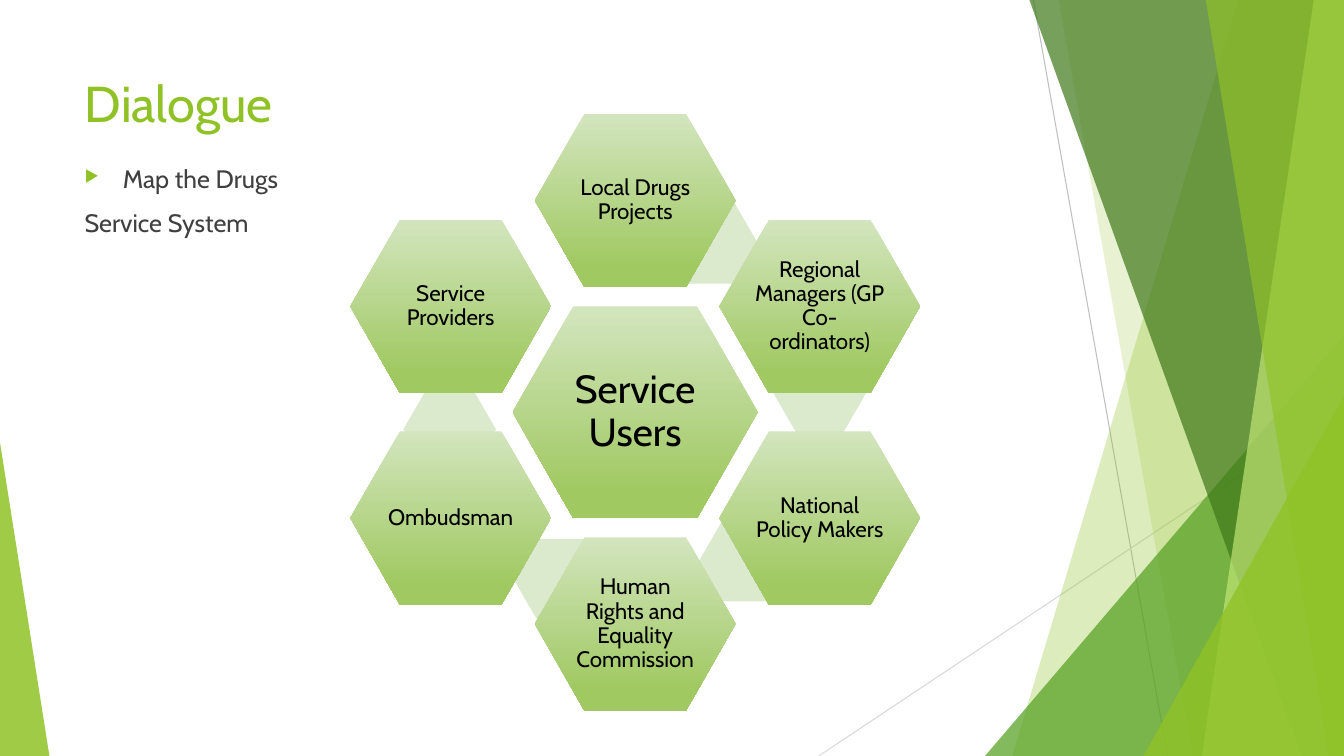
from dataclasses import dataclass

from lxml.etree import SubElement
from pptx import Presentation
from pptx.dml.color import RGBColor
from pptx.enum.shapes import MSO_CONNECTOR, MSO_SHAPE
from pptx.enum.text import MSO_ANCHOR, PP_ALIGN
from pptx.oxml.ns import qn
from pptx.util import Inches, Pt

TITLE = "Dialogue"
BODY = ["Map the Drugs", "Service System"]
HUB = "Service Users"
# Clockwise from the top
SERVICES = [
    "Local Drugs Projects",
    "Regional Managers (GP Co-ordinators)",
    "National Policy Makers",
    "Human Rights and Equality Commission",
    "Ombudsman",
    "Service Providers",
]
# Centre of the pale link behind each service; the last has none
LINK_CENTRES = [(7.06, 2.42), (8.13, 3.9), (7.39, 5.57), (5.55, 5.74), (4.46, 4.26)]

# Start, end, colour
RAYS = [
    ((10.25, 0), (11.58, 7.5), "BFBFBF"),
    ((13.33, 4.03), (8.12, 7.5), "D9D9D9"),
]
# Top left x, bottom left x, colour, opacity in percent; all reach the right edge
BANDS_BACK = [(12.28, 10.04, "90C226", 30), (10.5, 11.83, "90C226", 20)]
BANDS_FRONT = [
    (10.21, 12.91, "3F7819", 70),
    (13.03, 11.92, "C0E474", 70),
    (11.96, 13.18, "90C226", 65),
]
# Left, top, width, peak (0 left, 1 right), colour, opacity; all stand on the bottom
TRIANGLE_MIDDLE = (9.77, 3.33, 3.56, 1, "54A021", 72)
TRIANGLES_FRONT = [
    (11.34, 3.93, 1.99, 1, "90C226", 80),
    (0, 4.39, 0.49, 0, "90C226", 85),
]

WIDTH, HEIGHT = 13.33, 7.5
CENTRE_X, CENTRE_Y = 6.3, 4.09
HUB_SIZE = (2.43, 2.1)
SERVICE_SIZE = (1.99, 1.72)
LINK_SIZE = (0.92, 0.79)
STEP_X, STEP_Y = 1.83, 1.05
# Ring places in steps from the hub
RING = [(0, -2), (1, -1), (1, 1), (0, 2), (-1, 1), (-1, -1)]


@dataclass(frozen=True)
class Theme:
    font: str = "Cabin"
    accent: str = "90C226"
    body: str = "404040"
    label: str = "000000"
    hexagon_top: str = "D3E5BE"
    hexagon_bottom: str = "A0C962"
    link: str = "DBE9CD"
    title_size: int = 36
    body_size: int = 18
    hub_size: int = 28
    service_size: int = 16


THEME = Theme()


def add_span(para, text, size, colour):
    span = para.add_run()
    span.text = text
    span.font.name = THEME.font
    span.font.size = Pt(size)
    span.font.color.rgb = RGBColor.from_string(colour)


def paint(shape, colour, opacity=100):
    shape.shadow.inherit = False
    shape.line.fill.background()
    shape.fill.solid()
    shape.fill.fore_color.rgb = RGBColor.from_string(colour)
    if opacity < 100:
        tint = shape.fill._xPr.find(qn("a:solidFill"))[0]
        SubElement(tint, qn("a:alpha"), val=str(opacity * 1000))


def add_ray(page, start, end, colour):
    ray = page.shapes.add_connector(
        MSO_CONNECTOR.STRAIGHT, *[Inches(value) for value in start + end])
    ray.line.color.rgb = RGBColor.from_string(colour)
    ray.line.width = Pt(0.75)
    SubElement(ray._element.spPr, qn("a:effectLst"))


def add_band(page, top_x, bottom_x, colour, opacity):
    outline = page.shapes.build_freeform(Inches(top_x), 0)
    corners = [(WIDTH, 0), (WIDTH, HEIGHT), (bottom_x, HEIGHT)]
    outline.add_line_segments([(Inches(x), Inches(y)) for x, y in corners])
    paint(outline.convert_to_shape(), colour, opacity)


def add_triangle(page, left, top, width, peak, colour, opacity):
    triangle = page.shapes.add_shape(
        MSO_SHAPE.ISOSCELES_TRIANGLE, Inches(left), Inches(top),
        Inches(width), Inches(HEIGHT - top))
    triangle.adjustments[0] = peak
    paint(triangle, colour, opacity)


def add_hexagon(page, centre, size, slant):
    (x, y), (width, height) = centre, size
    hexagon = page.shapes.add_shape(
        MSO_SHAPE.HEXAGON, Inches(x - width / 2), Inches(y - height / 2),
        Inches(width), Inches(height))
    hexagon.adjustments[0] = slant
    paint(hexagon, THEME.link)
    return hexagon


def add_node(page, text, centre, size, text_size):
    """Add a shaded hexagon with a centred label."""
    node = add_hexagon(page, centre, size, 0.286)
    node.fill.gradient()
    node.fill.gradient_angle = 270
    first, last = node.fill.gradient_stops
    first.color.rgb = RGBColor.from_string(THEME.hexagon_top)
    first.position = 0
    last.color.rgb = RGBColor.from_string(THEME.hexagon_bottom)
    last.position = 0.88
    frame = node.text_frame
    frame.word_wrap = True
    frame.vertical_anchor = MSO_ANCHOR.MIDDLE
    frame.margin_left = frame.margin_right = Inches(0.02)
    frame.margin_top = frame.margin_bottom = Inches(0.02)
    para = frame.paragraphs[0]
    para.alignment = PP_ALIGN.CENTER
    para.line_spacing = 0.9
    add_span(para, text, text_size, THEME.label)


def add_backdrop(page):
    for ray in RAYS:
        add_ray(page, *ray)
    for band in BANDS_BACK:
        add_band(page, *band)
    add_triangle(page, *TRIANGLE_MIDDLE)
    for band in BANDS_FRONT:
        add_band(page, *band)
    for triangle in TRIANGLES_FRONT:
        add_triangle(page, *triangle)


def add_title(page):
    title = page.shapes.title
    title.left, title.top = Inches(0.74), Inches(0.67)
    title.width, title.height = Inches(9.4), Inches(1.44)
    title.text_frame.vertical_anchor = MSO_ANCHOR.TOP
    para = title.text_frame.paragraphs[0]
    para.alignment = PP_ALIGN.LEFT
    add_span(para, TITLE, THEME.title_size, THEME.accent)


def add_bullet(para):
    properties = para._p.get_or_add_pPr()
    properties.set("marL", str(Inches(0.38)))
    properties.set("indent", str(-Inches(0.38)))
    colour = SubElement(properties, qn("a:buClr"))
    SubElement(colour, qn("a:srgbClr"), val=THEME.accent)
    SubElement(properties, qn("a:buSzPct"), val="65000")
    SubElement(properties, qn("a:buChar"), char="▶")


def add_body(page):
    box = page.shapes.add_textbox(Inches(0.74), Inches(1.57), Inches(9.4), Inches(5.03))
    frame = box.text_frame
    frame.word_wrap = True
    for index, text in enumerate(BODY):
        para = frame.add_paragraph() if index else frame.paragraphs[0]
        para.space_before = Pt(10)
        add_span(para, text, THEME.body_size, THEME.body)
    add_bullet(frame.paragraphs[0])


def add_service_map(page):
    add_node(page, HUB, (CENTRE_X, CENTRE_Y), HUB_SIZE, THEME.hub_size)
    for index, (text, (column, row)) in enumerate(zip(SERVICES, RING)):
        if index < len(LINK_CENTRES):
            add_hexagon(page, LINK_CENTRES[index], LINK_SIZE, 0.289)
        centre = (CENTRE_X + column * STEP_X, CENTRE_Y + row * STEP_Y)
        add_node(page, text, centre, SERVICE_SIZE, THEME.service_size)


def main():
    deck = Presentation()
    deck.slide_width, deck.slide_height = Inches(WIDTH), Inches(HEIGHT)
    page = deck.slides.add_slide(deck.slide_layouts[5])
    add_backdrop(page)
    add_title(page)
    add_body(page)
    add_service_map(page)
    deck.save("out.pptx")


if __name__ == "__main__":
    main()
